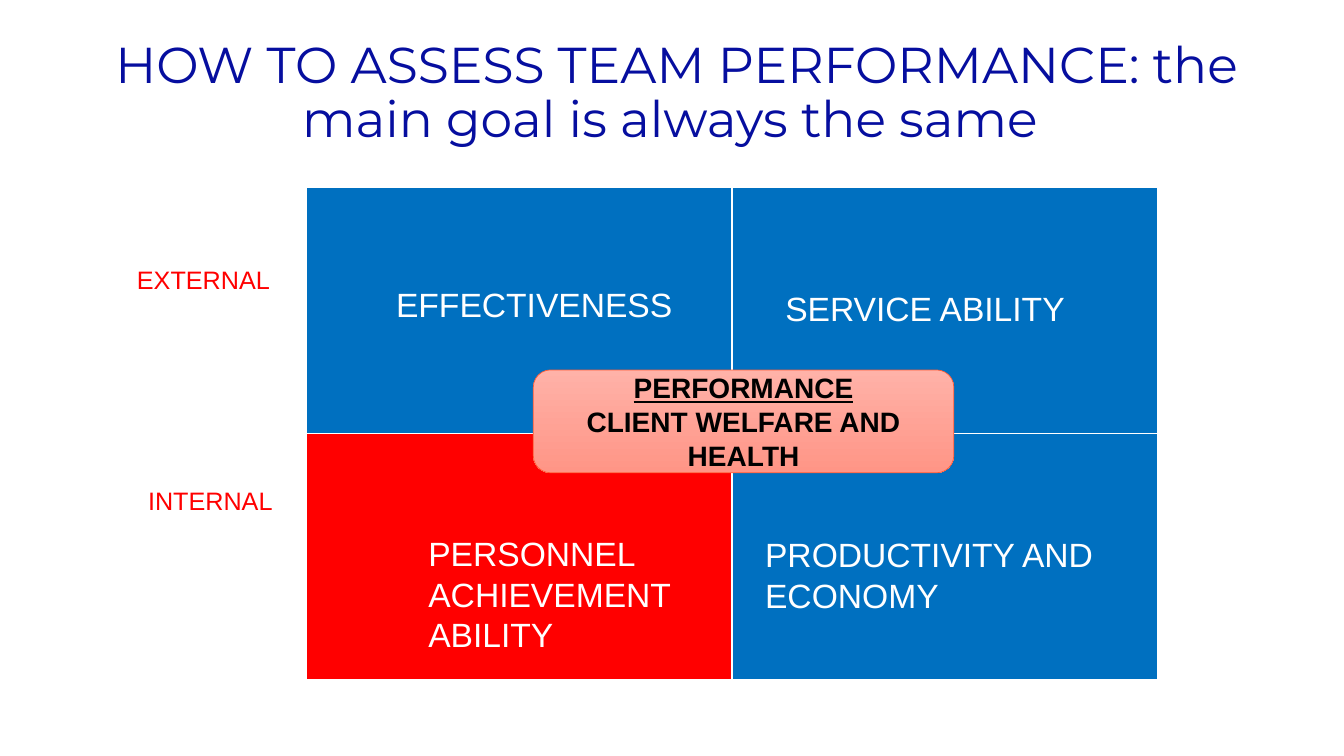
from lxml.etree import SubElement
from pptx import Presentation
from pptx.dml.color import RGBColor
from pptx.enum.shapes import MSO_SHAPE
from pptx.enum.text import MSO_ANCHOR, PP_ALIGN
from pptx.oxml.ns import qn
from pptx.util import Inches, Pt

# Content
TITLE = "HOW TO ASSESS TEAM PERFORMANCE: the main goal is always the same "
GOAL = ["PERFORMANCE", "CLIENT WELFARE AND HEALTH"]
BLUE, RED, WHITE = "0070C0", "FF0000", "FFFFFF"
QUADRANT_FILLS = [[BLUE, BLUE], [RED, BLUE]]
# text, left, top, width, height, size, colour
LABELS = [
    ("EXTERNAL", 1.26, 2.57, 1.71, 0.4, 18, RED),
    ("INTERNAL", 1.37, 4.77, 1.94, 0.4, 18, RED),
    ("EFFECTIVENESS", 3.83, 2.77, 2.99, 0.5, 24, WHITE),
    ("PRODUCTIVITY AND ECONOMY", 7.49, 5.25, 4.17, 0.91, 24, WHITE),
    ("PERSONNEL ACHIEVEMENT ABILITY", 4.15, 5.24, 2.99, 1.31, 24, WHITE),
    ("SERVICE ABILITY", 7.69, 2.81, 2.99, 0.5, 24, WHITE),
]


def rgb(value):
    return RGBColor.from_string(value)


def box(left, top, width, height):
    return [Inches(v) for v in (left, top, width, height)]


def write(sp, lines, size, color, font="Arial", align=PP_ALIGN.LEFT):
    tf = sp.text_frame
    tf.word_wrap = True
    tf.text = "\n".join(lines)
    for p in tf.paragraphs:
        p.alignment = align
        for r in p.runs:
            r.font.name = font
            r.font.size = Pt(size)
            r.font.color.rgb = rgb(color)
    return tf


def set_borders(cell, color, width):
    tc_pr = cell._tc.get_or_add_tcPr()
    for i, side in enumerate(("lnL", "lnR", "lnT", "lnB")):
        ln = tc_pr.makeelement(qn(f"a:{side}"), {"w": str(Pt(width))})
        fill = SubElement(ln, qn("a:solidFill"))
        SubElement(fill, qn("a:srgbClr"), val=color)
        tc_pr.insert(i, ln)


prs = Presentation()
prs.slide_width, prs.slide_height = Inches(13.33), Inches(7.5)
s = prs.slides.add_slide(prs.slide_layouts[6])

# Title
title = s.shapes.add_textbox(*box(0.96, 0.21, 11.5, 1.45))
tf = write(title, [TITLE], 36, "060E9F", "Montserrat", PP_ALIGN.CENTER)
tf.vertical_anchor = MSO_ANCHOR.MIDDLE
tf.paragraphs[0].line_spacing = 0.9

# Quadrants
table = s.shapes.add_table(2, 2, *box(3.04, 1.86, 8.44, 4.88)).table
for row, fills in zip(table.rows, QUADRANT_FILLS):
    for cell, color in zip(row.cells, fills):
        cell.fill.solid()
        cell.fill.fore_color.rgb = rgb(color)
        set_borders(cell, WHITE, 1)

# Central goal
goal = s.shapes.add_shape(MSO_SHAPE.ROUNDED_RECTANGLE, *box(5.29, 3.67, 4.17, 1.02))
goal.shadow.inherit = False
goal.fill.gradient()
goal.fill.gradient_angle = 270
for stop, color in zip(goal.fill.gradient_stops, ("FFB2A8", "FF9586")):
    stop.color.rgb = rgb(color)
goal.line.color.rgb = rgb("FF5B35")
goal.line.width = Pt(0.5)
tf = write(goal, GOAL, 20, "000000", align=PP_ALIGN.CENTER)
tf.vertical_anchor = MSO_ANCHOR.MIDDLE
for p in tf.paragraphs:
    p.runs[0].font.bold = True
tf.paragraphs[0].runs[0].font.underline = True

# Row and quadrant labels
for text, left, top, width, height, size, color in LABELS:
    label = s.shapes.add_textbox(*box(left, top, width, height))
    write(label, [text], size, color)

prs.save("out.pptx")
